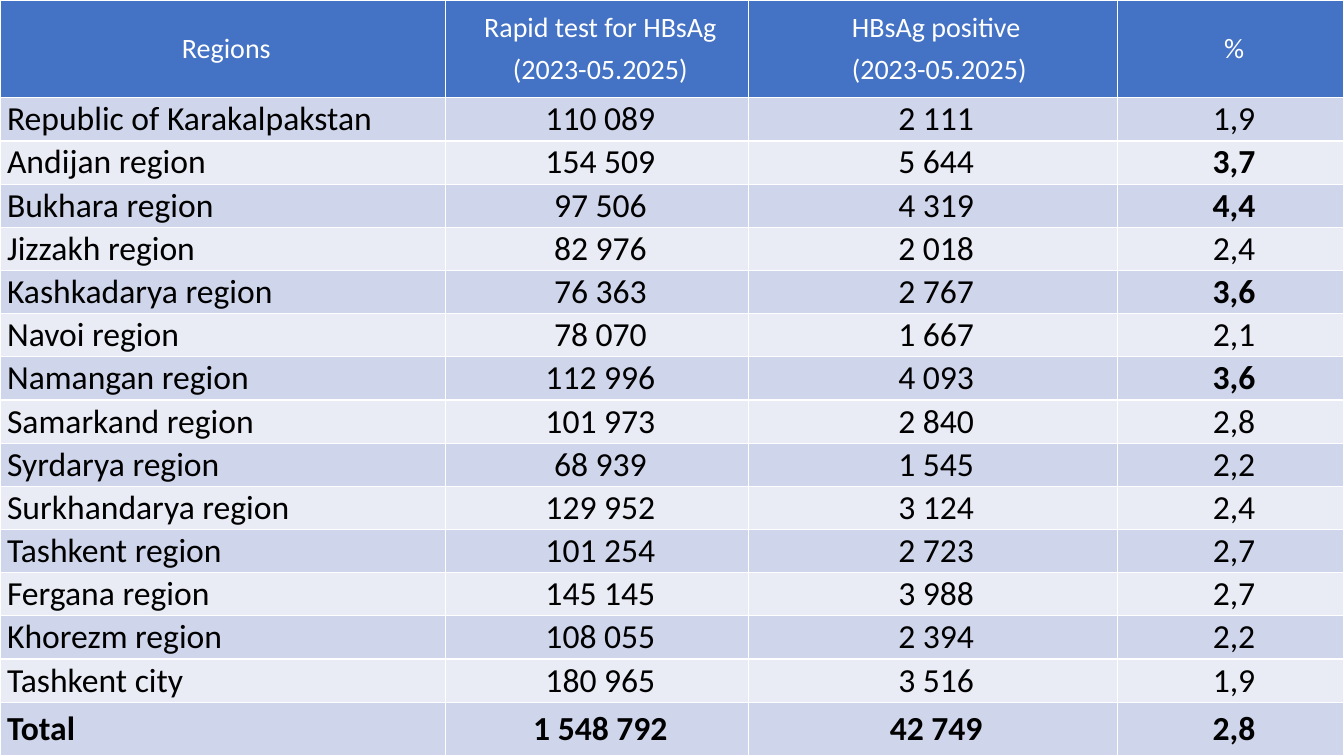
"""Build the slide with the table of HBsAg rapid tests by region."""
from pptx import Presentation
from pptx import util as u
from pptx.dml import color
from pptx.enum import text


def paint(fill, hex_color):
    fill.solid()
    fill.fore_color.rgb = color.RGBColor.from_string(hex_color)


deck = Presentation()
deck.slide_width, deck.slide_height = u.Inches(13.33), u.Inches(7.5)
slide = deck.slides.add_slide(deck.slide_layouts[6])

headings = ("Regions", "Rapid test for HBsAg\n(2023-05.2025)",
            "HBsAg positive\n (2023-05.2025)", "%")
regions = [
    ("Republic of Karakalpakstan", "110 089", "2 111", "1,9"),
    ("Andijan region", "154 509", "5 644", "3,7"),
    ("Bukhara region", "97 506", "4 319", "4,4"),
    ("Jizzakh region", "82 976", "2 018", "2,4"),
    ("Kashkadarya region", "76 363", "2 767", "3,6"),
    ("Navoi region", "78 070", "1 667", "2,1"),
    ("Namangan region", "112 996", "4 093", "3,6"),
    ("Samarkand region", "101 973", "2 840", "2,8"),
    ("Syrdarya region", "68 939", "1 545", "2,2"),
    ("Surkhandarya region", "129 952", "3 124", "2,4"),
    ("Tashkent region", "101 254", "2 723", "2,7"),
    ("Fergana region", "145 145", "3 988", "2,7"),
    ("Khorezm region", "108 055", "2 394", "2,2"),
    ("Tashkent city", "180 965", "3 516", "1,9"),
]
total = ("Total", "1 548 792", "42 749", "2,8")
high_rates = {"3,6", "3,7", "4,4"}
entries = [headings, *regions, total]

heading_height, total_height = 0.97, 0.53
region_height = (7.5 - heading_height - total_height) / len(regions)
row_heights = [heading_height, *[region_height] * len(regions), total_height]
column_widths = (4.42, 3, 3.66, 2.25)

results = slide.shapes.add_table(len(entries), len(headings), 0, 0,
                                 deck.slide_width, deck.slide_height).table
for column, width in zip(results.columns, column_widths):
    column.width = u.Inches(width)
for row, height in zip(results.rows, row_heights):
    row.height = u.Inches(height)

cell_format = {"margin_left": 0, "margin_top": 0, "margin_right": 0, "margin_bottom": 0,
               "vertical_anchor": text.MSO_ANCHOR.MIDDLE}
for r, entry in enumerate(entries):
    is_heading = r == 0
    band = "4472C4" if is_heading else ("E9EBF5", "CFD5EA")[r % 2]
    for c, value in enumerate(entry):
        cell = results.cell(r, c)
        cell.text = value
        for name, setting in cell_format.items():
            setattr(cell, name, setting)
        paint(cell.fill, band)
        font_format = {"name": "Calibri", "size": u.Pt(20 if is_heading else 24),
                       "bold": entry is total or value in high_rates}
        is_region_name = c == 0 and not is_heading
        for line in cell.text_frame.paragraphs:
            line.alignment = text.PP_ALIGN.LEFT if is_region_name else text.PP_ALIGN.CENTER
            line.space_after = u.Pt(5)
            indents = line._p.get_or_add_pPr()
            indents.set("marL", str(u.Inches(0.07)))
            indents.set("indent", "0")
            for run in line.runs:
                for name, setting in font_format.items():
                    setattr(run.font, name, setting)
                paint(run.font.fill, "FFFFFF" if is_heading else "000000")

deck.save("out.pptx")
